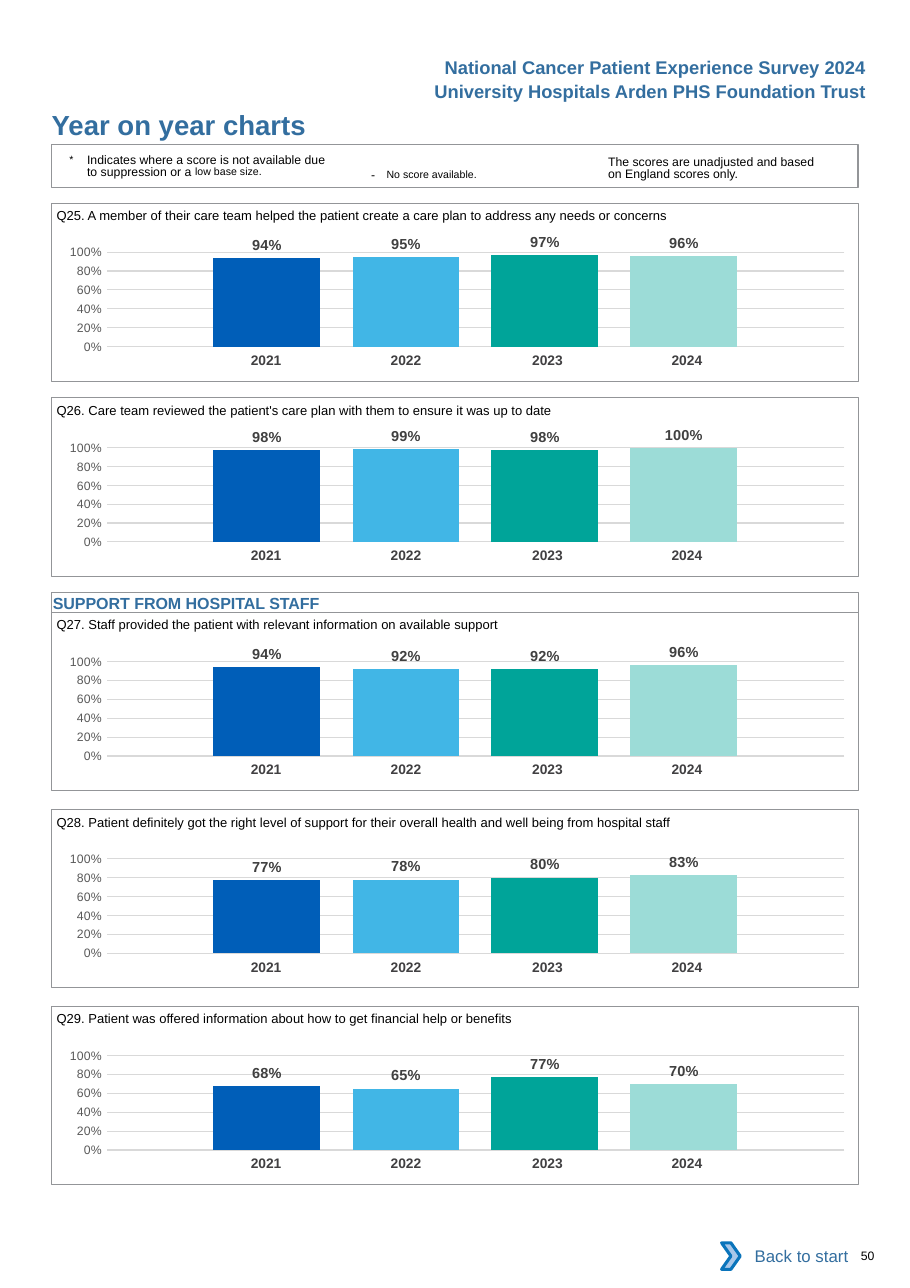
import dataclasses
import pptx
import pptx.chart.data
import pptx.dml.color
import pptx.enum.chart
import pptx.enum.shapes
import pptx.enum.text
import pptx.oxml
import pptx.oxml.ns
import pptx.util

Pt = pptx.util.Pt
ALIGN = pptx.enum.text.PP_ALIGN
ANCHOR = pptx.enum.text.MSO_ANCHOR
SHAPE = pptx.enum.shapes.MSO_SHAPE


@dataclasses.dataclass(frozen=True)
class Theme:
    font: str = "Arial"
    base: str = "Calibri"
    blue: str = "336E9F"
    ink: str = "000000"
    frame: str = "939598"
    white: str = "FFFFFF"
    grid: str = "D9D9D9"
    tick: str = "595959"
    label: str = "404040"
    year: str = "414042"
    arrow: str = "A8C7E9"
    edge: str = "0A74BB"
    bars: tuple = ("005EB8", "41B6E6", "00A499", "9CDCD7")
    title: float = 18
    head: float = 12
    link: float = 11
    topic: float = 10.5
    plot: float = 10
    value: float = 9.5
    date: float = 9
    ask: float = 8.5
    small: float = 8


T = Theme()
YEARS = ("2021", "2022", "2023", "2024")
LEFT, WIDE, TALL = 33.8, 527, 116.6
NO_STYLE = "{2D5ABB26-0587-4C30-8999-92F81FD0307C}"
PLOT = {"x": 0.079, "y": 0.145, "w": 0.915, "h": 0.666}

# Top of panel, question, score of each year
PANELS = (
    (132.6, "Q25. A member of their care team helped the patient create a care plan "
            "to address any needs or concerns", (0.94, 0.95, 0.97, 0.96)),
    (260, "Q26. Care team reviewed the patient's care plan with them to ensure it was "
          "up to date", (0.98, 0.99, 0.98, 1)),
    (400.1, "Q27. Staff provided the patient with relevant information on available "
            "support", (0.94, 0.92, 0.92, 0.96)),
    (529, "Q28. Patient definitely got the right level of support for their overall "
          "health and well being from hospital staff", (0.77, 0.78, 0.8, 0.83)),
    (657.6, "Q29. Patient was offered information about how to get financial help or "
            "benefits", (0.68, 0.65, 0.77, 0.7)),
)


def rgb(code):
    return pptx.dml.color.RGBColor.from_string(code)


def style(font, size, color, bold=False):
    font.name, font.size, font.bold = T.font, Pt(size), bold
    font.color.rgb = rgb(color)


def write(frame, text, size, color, bold=False, align=ALIGN.LEFT, pad=(0, 0, 0, 0)):
    frame.word_wrap = True
    (frame.margin_left, frame.margin_top,
     frame.margin_right, frame.margin_bottom) = map(Pt, pad)
    para = frame.paragraphs[0]
    para.text, para.alignment = text, align
    style(para.font, size, color, bold)
    return para


def label(slide, box, text, size, color, **more):
    return write(slide.shapes.add_textbox(*map(Pt, box)).text_frame,
                 text, size, color, **more)


def block(slide, box, kind=SHAPE.RECTANGLE, fill=None, line=None, width=0.5):
    shape = slide.shapes.add_shape(kind, *map(Pt, box))
    shape.shadow.inherit = False
    if fill:
        shape.fill.solid()
        shape.fill.fore_color.rgb = rgb(fill)
    else:
        shape.fill.background()
    if line:
        shape.line.color.rgb = rgb(line)
        shape.line.width = Pt(width)
    else:
        shape.line.fill.background()
    return shape


def lift(para, text, base):
    """Add a run raised by a percentage of its size."""
    run = para.add_run()
    run.text = text
    run.font.size = Pt(T.head)
    run.font._element.set("baseline", str(base * 1000))


def header(slide, x, y, w):
    for row, text in enumerate(("National Cancer Patient Experience Survey 2024",
                                "University Hospitals Arden PHS Foundation Trust")):
        label(slide, (x + w - 305, y + row * 16, 305, 21.6), text, T.head, T.blue,
              bold=True, align=ALIGN.RIGHT, pad=(0, 3.6, 7.2, 3.6))
    label(slide, (x, y + 37.6, 324, 21.6), "Year on year charts",
          T.title, T.blue, bold=True)


def notes(slide, x, y, w, h):
    block(slide, (x, y, w, h), line=T.frame, width=0.75)
    # Suppressed scores
    para = label(slide, (x + 11.6, y + 5, 171, 20), "", T.small, T.ink, pad=(0, 2.2, 0, 0))
    para.line_spacing = Pt(8.1)
    para._p.get_or_add_pPr().set("marL", str(Pt(11.5)))
    para._p.get_or_add_pPr().set("indent", str(-Pt(11.5)))
    lift(para, "*\t", 3)
    para.add_run().text = "Indicates where a score is not available due to suppression or a "
    lift(para, "low base size.", 7)
    # Missing scores
    para = label(slide, (x + 201.6, y + 7.2, 132, 17.3), "- ", T.small, T.ink,
                 pad=(7.2, 3.6, 7.2, 3.6))
    para.runs[0].font._element.set("spc", "260")
    lift(para, "No score available.", 3)
    # Basis of scores
    para = label(slide, (x + 363.6, y + 5.5, 143, 19.4),
                 "The scores are unadjusted and based on England scores only.",
                 T.small, T.ink, pad=(0, 2.2, 0, 0))
    para.line_spacing = Pt(8.1)


def graph(slide, box, scores):
    data = pptx.chart.data.CategoryChartData(number_format="0%")
    data.categories = ["1"]
    for num, score in enumerate(scores, 1):
        data.add_series(f"Series {num}", [score])
    chart = slide.shapes.add_chart(pptx.enum.chart.XL_CHART_TYPE.COLUMN_CLUSTERED,
                                   *map(Pt, box), data).chart
    chart.has_legend = chart.has_title = False
    chart.font.name, chart.font.size = T.base, Pt(T.plot)
    chart.font.color.rgb = rgb(T.ink)
    # Axes
    chart.category_axis.visible = False
    axis = chart.value_axis
    axis.minimum_scale, axis.maximum_scale, axis.major_unit = 0, 1, 0.2
    axis.major_tick_mark = pptx.enum.chart.XL_TICK_MARK.NONE
    axis.format.line.fill.background()
    axis.major_gridlines.format.line.color.rgb = rgb(T.grid)
    axis.major_gridlines.format.line.width = Pt(0.75)
    axis.tick_labels.number_format = "0%"
    axis.tick_labels.number_format_is_linked = False
    style(axis.tick_labels.font, T.small, T.tick)
    # Bars
    plot = chart.plots[0]
    plot.gap_width, plot.overlap, plot.vary_by_categories = 200, -30, False
    for bar, color in zip(plot.series, T.bars):
        bar.format.fill.solid()
        bar.format.fill.fore_color.rgb = rgb(color)
        tags = bar.data_labels
        tags.show_value = True
        tags.position = pptx.enum.chart.XL_LABEL_POSITION.OUTSIDE_END
        tags.number_format, tags.number_format_is_linked = "0%", False
        style(tags.font, T.value, T.label, True)
    # Fixed plot area
    area = chart._chartSpace.chart.plotArea
    for old in area.findall(pptx.oxml.ns.qn("c:layout")):
        area.remove(old)
    sides = "".join(f'<c:{key} val="{val}"/>' for key, val in PLOT.items())
    area.insert(0, pptx.oxml.parse_xml(
        f'<c:layout {pptx.oxml.ns.nsdecls("c")}><c:manualLayout>'
        '<c:layoutTarget val="inner"/><c:xMode val="edge"/><c:yMode val="edge"/>'
        f'{sides}</c:manualLayout></c:layout>'))


def dates(slide, x, y, h):
    widths, pads = (91.4, 91.4, 96.5, 91.4), (0, 0, 2.9, 8.6)
    table = slide.shapes.add_table(1, len(YEARS), Pt(x), Pt(y), Pt(sum(widths)), Pt(h)).table
    table.first_row = table.horz_banding = False
    table._tbl.tblPr[0].text = NO_STYLE
    for col, (year, wide, pad) in enumerate(zip(YEARS, widths, pads)):
        table.columns[col].width = Pt(wide)
        cell = table.cell(0, col)
        cell.fill.background()
        para = cell.text_frame.paragraphs[0]
        para.text, para.alignment = year, ALIGN.CENTER
        style(para.font, T.date, T.year, True)
        cell.margin_left, cell.margin_right = Pt(7.2), Pt(pad)
        cell.margin_top = cell.margin_bottom = Pt(3.6)


def panel(slide, x, y, w, h, ask, scores):
    graph(slide, (x - 5.8, y + 18.7, w, 92.9), scores)
    dates(slide, x + 90.8, y + 94.5, 19.4)
    block(slide, (x, y, w, h), line=T.frame)
    label(slide, (x + 3.2, y, w - 4, 16), ask, T.ask, T.ink, pad=(0, 3, 0, 0))


def section(slide, x, y, w, h):
    frame = block(slide, (x, y, w, h), line=T.frame).text_frame
    frame.vertical_anchor = ANCHOR.MIDDLE
    write(frame, "SUPPORT FROM HOSPITAL STAFF", T.topic, T.blue, bold=True,
          pad=(0.7, 0.7, 0, 0))


def footer(slide, x, y, w, h):
    frame = block(slide, (x + 5, y, 85, h), fill=T.white).text_frame
    frame.vertical_anchor = ANCHOR.MIDDLE
    write(frame, "Back to start", T.link, T.blue, align=ALIGN.RIGHT,
          pad=(7.2, 3.6, 7.2, 3.6))
    block(slide, (x, y + 6.5, 12.2, 17.3), SHAPE.CHEVRON, T.arrow, T.edge, 2)
    label(slide, (x + w - 30, y + 10.1, 30, 9.4), "50", T.small, T.ink)


def main():
    deck = pptx.Presentation()
    deck.slide_width, deck.slide_height = Pt(594.7), Pt(841.7)
    slide = deck.slides.add_slide(deck.slide_layouts[6])
    header(slide, LEFT, 33, 539.4)
    notes(slide, LEFT, 94.3, WIDE, 28.1)
    for top, ask, scores in PANELS:
        panel(slide, LEFT, top, WIDE, TALL, ask, scores)
    section(slide, LEFT, 387.1, WIDE, 13)
    footer(slide, 471.6, 805.7, 121, 30.2)
    deck.save("out.pptx")


if __name__ == "__main__":
    main()
